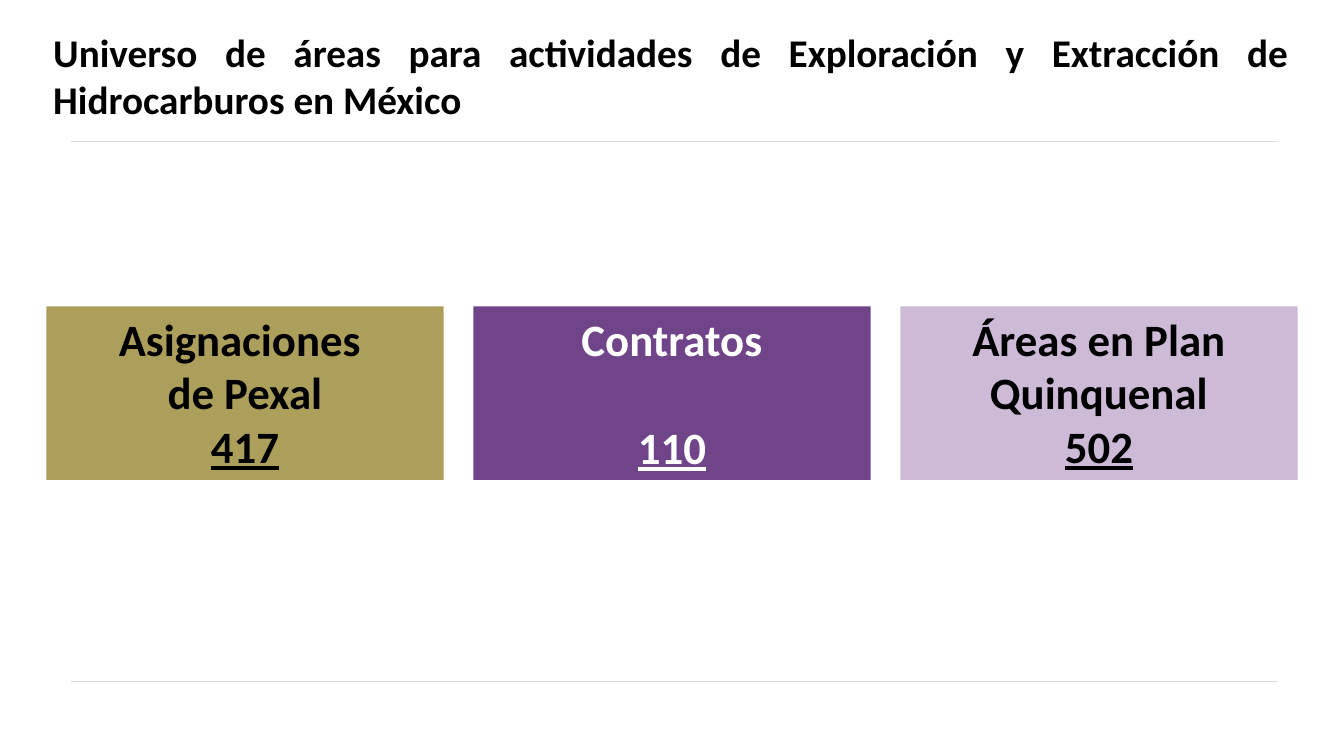
from lxml import etree
from pptx import Presentation
from pptx.dml.color import RGBColor
from pptx.enum import shapes, text
from pptx.oxml.ns import qn
from pptx.util import Inches, Pt

TITLE = ("Universo de áreas para actividades de Exploración "
         "y Extracción de Hidrocarburos en México")
# label lines, count, fill, text colour, points above the count
CARDS = [
    (["Asignaciones ", "de Pexal"], "417", "olive", "black", 0),
    (["Contratos"], "110", "purple", "white", 39),
    (["Áreas en Plan Quinquenal"], "502", "lilac", "black", 0),
]
RULES = [1.4, 6.76]
THEME = {
    "font": "Calibri", "title": 28, "card": 32, "rule": 0.5,
    "olive": "AC9F5B", "purple": "704489", "lilac": "CCBAD7",
    "black": "000000", "white": "FFFFFF", "grey": "D9D9D9",
}
LEFT, TOP, WIDTH, HEIGHT, STEP = 0.46, 3.04, 3.94, 1.72, 4.235


def tint(name):
    return RGBColor.from_string(THEME[name])


def write(para, words, size, color, align, **more):
    para.alignment = align
    run = para.add_run()
    run.text = words
    style = {"name": THEME["font"], "size": Pt(THEME[size]), "bold": True, **more}
    for key, value in style.items():
        setattr(run.font, key, value)
    run.font.color.rgb = tint(color)


def add_rule(slide, y):
    line = slide.shapes.add_connector(
        shapes.MSO_CONNECTOR.STRAIGHT,
        Inches(0.7), Inches(y), Inches(12.68), Inches(y))
    line.line.color.rgb = tint("grey")
    line.line.width = Pt(THEME["rule"])
    etree.SubElement(line._element.spPr, qn("a:effectLst"))


def add_card(slide, index, labels, count, fill, color, gap):
    card = slide.shapes.add_shape(
        shapes.MSO_SHAPE.RECTANGLE, Inches(LEFT + index * STEP),
        Inches(TOP), Inches(WIDTH), Inches(HEIGHT))
    card.shadow.inherit = False
    card.fill.solid()
    card.fill.fore_color.rgb = tint(fill)
    card.line.fill.background()
    frame = card.text_frame
    frame.word_wrap = True
    frame.vertical_anchor = text.MSO_ANCHOR.TOP
    center = text.PP_ALIGN.CENTER
    for row, label in enumerate(labels):
        para = frame.add_paragraph() if row else frame.paragraphs[0]
        write(para, label, "card", color, center)
    para = frame.add_paragraph()
    para.space_before = Pt(gap)
    write(para, count, "card", color, center, underline=True)


def add_title(slide):
    box = slide.shapes.add_textbox(
        Inches(0.43), Inches(0.23), Inches(12.44), Inches(1.04))
    box.text_frame.word_wrap = True
    write(box.text_frame.paragraphs[0], TITLE, "title", "black",
          text.PP_ALIGN.JUSTIFY)


def main():
    deck = Presentation()
    deck.slide_width, deck.slide_height = Inches(13.33), Inches(7.5)
    slide = deck.slides.add_slide(deck.slide_layouts[6])
    for y in RULES:
        add_rule(slide, y)
    for index, card in enumerate(CARDS):
        add_card(slide, index, *card)
    add_title(slide)
    deck.save("out.pptx")


if __name__ == "__main__":
    main()
